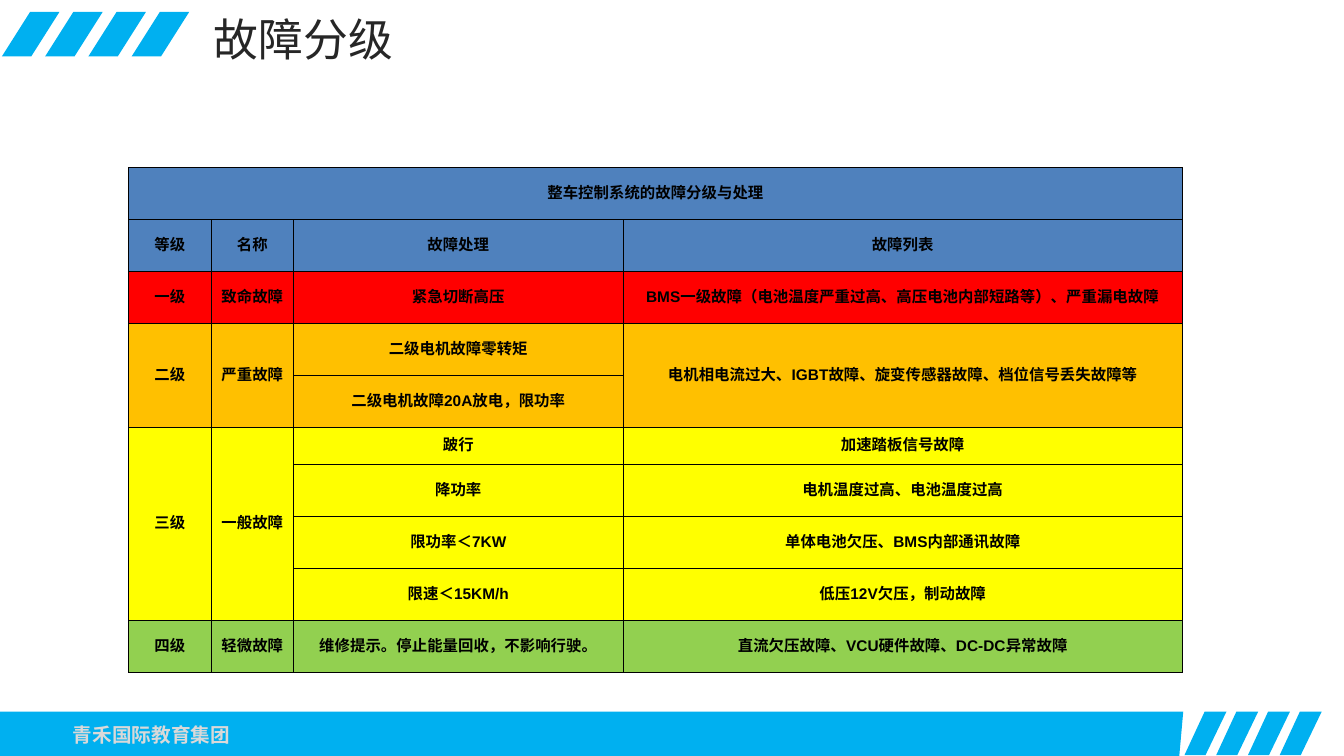
from lxml import etree
from pptx import Presentation
from pptx.dml.color import RGBColor
from pptx.enum.text import MSO_ANCHOR, MSO_AUTO_SIZE, PP_ALIGN
from pptx.oxml.ns import qn
from pptx.util import Cm, Pt

LEFT, CENTER = PP_ALIGN.LEFT, PP_ALIGN.CENTER
TOP, MIDDLE = MSO_ANCHOR.TOP, MSO_ANCHOR.MIDDLE
GROW = MSO_AUTO_SIZE.SHAPE_TO_FIT_TEXT

CYAN = RGBColor(0x00, 0xB0, 0xF0)
LIGHT_GRAY = RGBColor(0xD9, 0xD9, 0xD9)
CHARCOAL = RGBColor(0x26, 0x26, 0x26)
BLACK = RGBColor(0x00, 0x00, 0x00)
BLUE = RGBColor(0x4F, 0x81, 0xBD)
RED = RGBColor(0xFF, 0x00, 0x00)
ORANGE = RGBColor(0xFF, 0xC0, 0x00)
YELLOW = RGBColor(0xFF, 0xFF, 0x00)
GREEN = RGBColor(0x92, 0xD0, 0x50)

HAN_FONT = "Noto Sans CJK SC"
TITLE = "故障分级"
FOOTER = "青禾国际教育集团"

ROWS = [
    (BLUE, ["整车控制系统的故障分级与处理", "", "", ""]),
    (BLUE, ["等级", "名称", "故障处理", "故障列表"]),
    (RED, ["一级", "致命故障", "紧急切断高压",
           "BMS一级故障（电池温度严重过高、高压电池内部短路等）、严重漏电故障"]),
    (ORANGE, ["二级", "严重故障", "二级电机故障零转矩",
              "电机相电流过大、IGBT故障、旋变传感器故障、档位信号丢失故障等"]),
    (ORANGE, ["", "", "二级电机故障20A放电，限功率", ""]),
    (YELLOW, ["三级", "一般故障", "跛行", "加速踏板信号故障"]),
    (YELLOW, ["", "", "降功率", "电机温度过高、电池温度过高"]),
    (YELLOW, ["", "", "限功率＜7KW", "单体电池欠压、BMS内部通讯故障"]),
    (YELLOW, ["", "", "限速＜15KM/h", "低压12V欠压，制动故障"]),
    (GREEN, ["四级", "轻微故障", "维修提示。停止能量回收，不影响行驶。",
             "直流欠压故障、VCU硬件故障、DC-DC异常故障"]),
]
MERGES = [((0, 0), (0, 3)), ((3, 0), (4, 0)), ((3, 1), (4, 1)),
          ((3, 3), (4, 3)), ((5, 0), (8, 0)), ((5, 1), (8, 1))]
COLUMN_WIDTHS = [2.08, 2.08, 8.3, 14.1]
ROW_HEIGHT, SHORT_ROW_HEIGHT, SHORT_ROW = 1.31, 0.93, 5

STRIPE_COUNT = 4
HEADER_STRIPE = [(0.76, 0.3), (0.05, 1.42), (0.79, 1.42), (1.5, 0.3)]
FOOTER_STRIPE = [(30.38, 19.03), (30.91, 17.93), (30.36, 17.93), (29.85, 19.03)]
FOOTER_BAR = [(29.82, 17.93), (29.72, 19.05), (-0.3, 19.05), (0, 17.93)]
HEADER_STEP, FOOTER_STEP = 1.09, 0.8

TITLE_FORMAT = {"size": Pt(32), "name": HAN_FONT, "bold": False}
FOOTER_FORMAT = {"size": Pt(14), "name": HAN_FONT, "bold": True}
CELL_FORMAT = {"size": Pt(11), "name": "Arial", "bold": True}


def apply(target, values):
    for name, value in values.items():
        setattr(target, name, value)


def write(frame, text, align, values, color):
    para = frame.paragraphs[0]
    para.alignment = align
    span = para.add_run()
    span.text = text
    apply(span.font, values)
    span.font.color.rgb = color
    etree.SubElement(span.font._element, qn("a:ea"), typeface=HAN_FONT)


def draw_polygon(page, points, shift=0):
    corners = [(Cm(x + shift), Cm(y)) for x, y in points]
    builder = page.shapes.build_freeform(*corners[0])
    builder.add_line_segments(corners[1:], close=True)
    shape = builder.convert_to_shape()
    shape.shadow.inherit = False
    shape.fill.solid()
    shape.fill.fore_color.rgb = CYAN
    shape.line.fill.background()


def add_borders(cell):
    properties = cell._tc.get_or_add_tcPr()
    for index, side in enumerate(("a:lnL", "a:lnR", "a:lnT", "a:lnB")):
        border = etree.Element(qn(side), w=str(Pt(0.5)))
        fill = etree.SubElement(border, qn("a:solidFill"))
        etree.SubElement(fill, qn("a:srgbClr"), val=str(BLACK))
        properties.insert(index, border)


def draw_table(page):
    heights = [SHORT_ROW_HEIGHT if index == SHORT_ROW else ROW_HEIGHT
               for index in range(len(ROWS))]
    table = page.shapes.add_table(
        len(ROWS), len(COLUMN_WIDTHS), Cm(3.24), Cm(4.22),
        Cm(sum(COLUMN_WIDTHS)), Cm(sum(heights))).table
    for column, width in zip(table.columns, COLUMN_WIDTHS):
        column.width = Cm(width)
    for row, height, (color, texts) in zip(table.rows, heights, ROWS):
        row.height = Cm(height)
        for cell, text in zip(row.cells, texts):
            apply(cell, {"margin_left": Cm(0.03), "margin_right": Cm(0.03),
                         "margin_top": Cm(0.03), "margin_bottom": Cm(0.13),
                         "vertical_anchor": MIDDLE})
            cell.fill.solid()
            cell.fill.fore_color.rgb = color
            add_borders(cell)
            if text:
                write(cell.text_frame, text, CENTER, CELL_FORMAT, BLACK)
    for first, last in MERGES:
        table.cell(*first).merge(table.cell(*last))


def main():
    deck = Presentation()
    deck.slide_width, deck.slide_height = Cm(33.87), Cm(19.05)
    page = deck.slides.add_slide(deck.slide_layouts[5])

    for index in range(STRIPE_COUNT):
        draw_polygon(page, FOOTER_STRIPE, index * FOOTER_STEP)
        draw_polygon(page, HEADER_STRIPE, index * HEADER_STEP)
    draw_polygon(page, FOOTER_BAR)

    footer = page.shapes.add_textbox(Cm(1.42), Cm(18.06), Cm(4.8), Cm(0.91))
    apply(footer.text_frame, {"word_wrap": False, "vertical_anchor": MIDDLE})
    write(footer.text_frame, FOOTER, CENTER, FOOTER_FORMAT, LIGHT_GRAY)

    title = page.shapes.title
    apply(title, {"left": Cm(5.13), "top": Cm(0.18),
                  "width": Cm(16.05), "height": Cm(1.63)})
    apply(title.text_frame, {"word_wrap": True, "vertical_anchor": TOP,
                             "auto_size": GROW})
    write(title.text_frame, TITLE, LEFT, TITLE_FORMAT, CHARCOAL)

    draw_table(page)
    deck.save("out.pptx")


if __name__ == "__main__":
    main()
